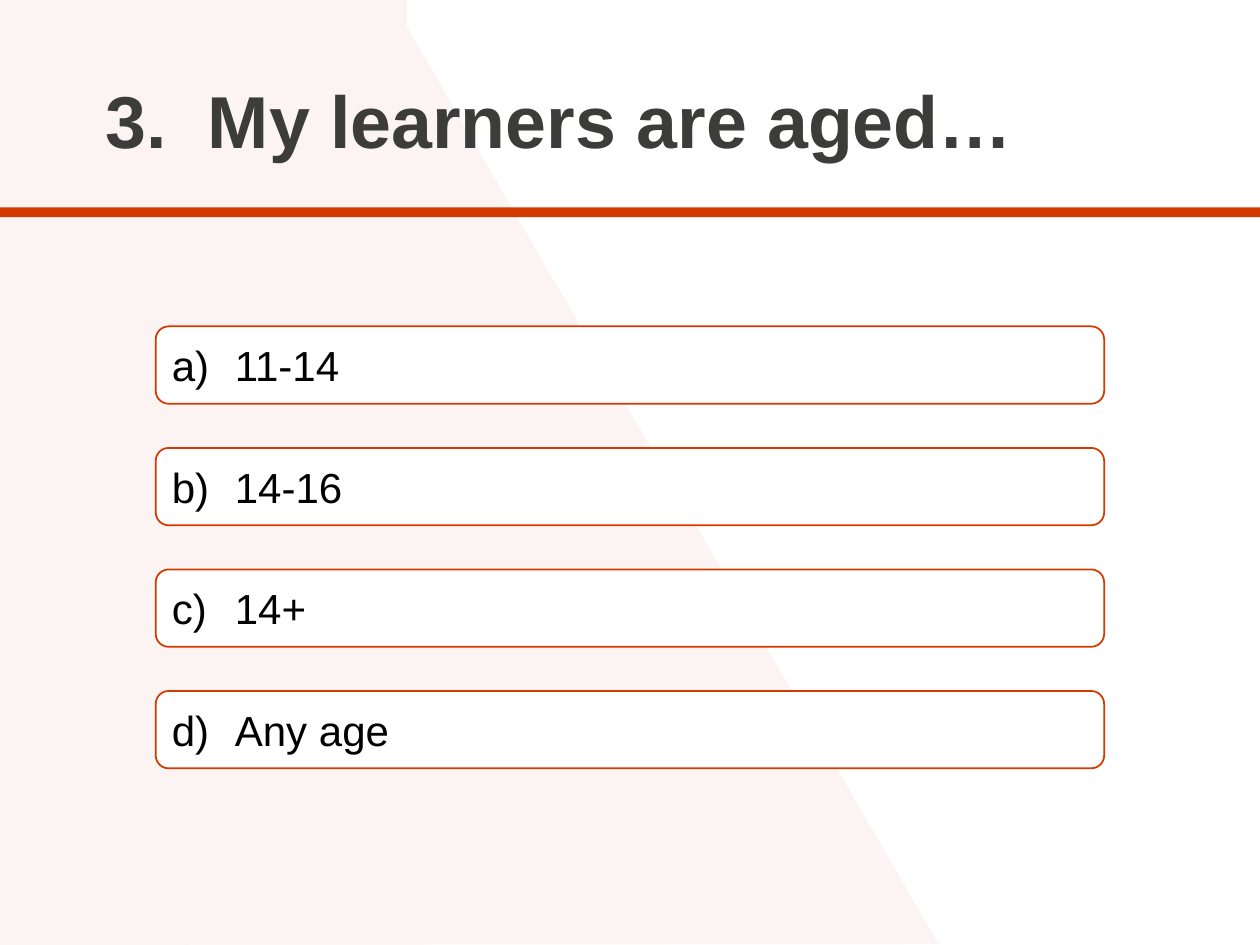
import pptx
import pptx.dml.color
import pptx.enum.shapes
import pptx.enum.text
import pptx.oxml
import pptx.oxml.ns
import pptx.util

Cm = pptx.util.Cm
Pt = pptx.util.Pt
ShapeType = pptx.enum.shapes.MSO_SHAPE

COLOURS = {
    "accent": "D43900",
    "title": "3C3C3B",
    "answer": "000000",
    "paper": "FFFFFF",
}


class QuizSlide:
    """Hold the quiz style and the current slide, and draw its elements."""

    font_name = "Arial"

    def __init__(self, presentation):
        self.slide = presentation.slides.add_slide(presentation.slide_layouts[6])

    def colour(self, name):
        return pptx.dml.color.RGBColor.from_string(COLOURS[name])

    def paint(self, shape, fill, line=None):
        shape.shadow.inherit = False
        shape.fill.solid()
        shape.fill.fore_color.rgb = self.colour(fill)
        if line:
            shape.line.color.rgb = self.colour(line)
            shape.line.width = Pt(1)
        else:
            shape.line.fill.background()

    def add_wedge(self, points, opacity):
        corners = [(Cm(x), Cm(y)) for x, y in points]
        builder = self.slide.shapes.build_freeform(*corners[0])
        builder.add_line_segments(corners[1:], close=True)
        shape = builder.convert_to_shape()
        self.paint(shape, "accent")
        colour_element = shape.fill._xPr.find(".//" + pptx.oxml.ns.qn("a:srgbClr"))
        alpha = pptx.oxml.parse_xml(
            f'<a:alpha {pptx.oxml.ns.nsdecls("a")} val="{opacity * 1000}"/>'
        )
        colour_element.append(alpha)

    def add_rule(self, top, width, height):
        shape = self.slide.shapes.add_shape(
            ShapeType.RECTANGLE, 0, Cm(top), Cm(width), Cm(height)
        )
        self.paint(shape, "accent")

    def write_numbered(self, shape, text, scheme, number, margin, hanging, size, colour, bold):
        frame = shape.text_frame
        frame.word_wrap = True
        frame.vertical_anchor = pptx.enum.text.MSO_ANCHOR.MIDDLE
        paragraph = frame.paragraphs[0]
        paragraph.alignment = pptx.enum.text.PP_ALIGN.LEFT
        properties = paragraph._p.get_or_add_pPr()
        properties.set("marL", str(Cm(margin)))
        properties.set("indent", str(-Cm(hanging)))
        properties.append(pptx.oxml.parse_xml(
            f'<a:buAutoNum {pptx.oxml.ns.nsdecls("a")} type="{scheme}" startAt="{number}"/>'
        ))
        run = paragraph.add_run()
        run.text = text
        run.font.name = self.font_name
        run.font.size = Pt(size)
        run.font.bold = bold
        run.font.color.rgb = self.colour(colour)
        return paragraph

    def add_question(self, number, text):
        shape = self.slide.shapes.add_textbox(Cm(1.6), Cm(0.74), Cm(22.17), Cm(3.53))
        paragraph = self.write_numbered(
            shape, text, "arabicPeriod", number, 2.34, 2.06, 42, "title", True
        )
        paragraph.line_spacing = 0.9
        paragraph.space_before = Pt(7.5)

    def add_answer(self, number, text, top):
        shape = self.slide.shapes.add_shape(
            ShapeType.ROUNDED_RECTANGLE, Cm(3.14), Cm(top), Cm(19.12), Cm(1.56)
        )
        self.paint(shape, "paper", "accent")
        self.write_numbered(
            shape, text, "alphaLcParenR", number, 1.27, 1.27, 24, "answer", False
        )


def main():
    presentation = pptx.Presentation()
    presentation.slide_width = Cm(25.4)
    presentation.slide_height = Cm(19.05)

    quiz = QuizSlide(presentation)
    quiz.add_wedge([(0, 0), (8.2, 0), (8.2, 0.53), (18.92, 19.03), (0, 19.05)], opacity=5)
    quiz.add_rule(top=4.18, width=25.4, height=0.2)
    quiz.add_question(3, "My learners are aged…")

    answers = ["11-14", "14-16", "14+", "Any age"]
    first_top, pitch = 6.58, 2.45
    for index, answer in enumerate(answers):
        quiz.add_answer(index + 1, answer, first_top + index * pitch)

    presentation.save("out.pptx")


if __name__ == "__main__":
    main()
